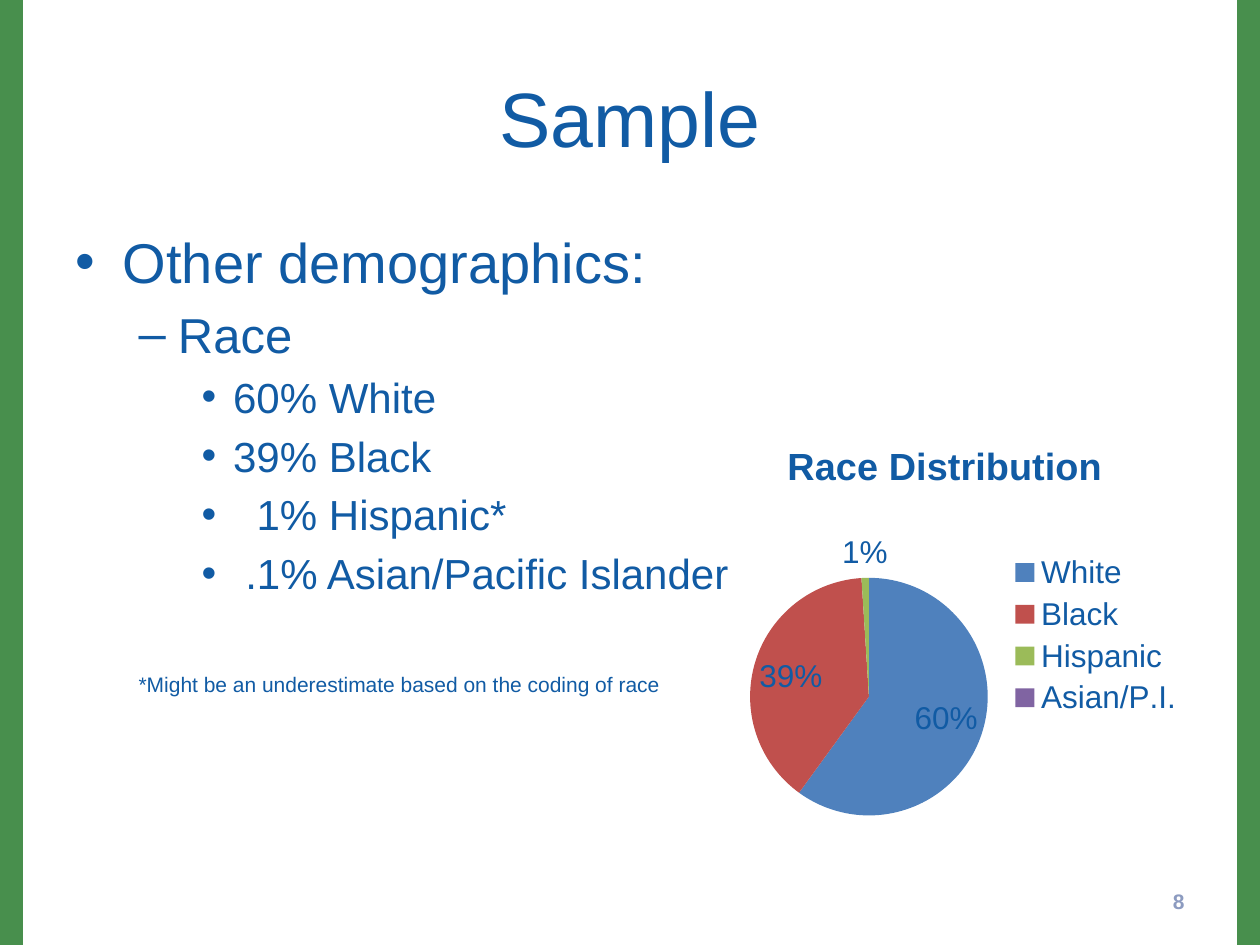
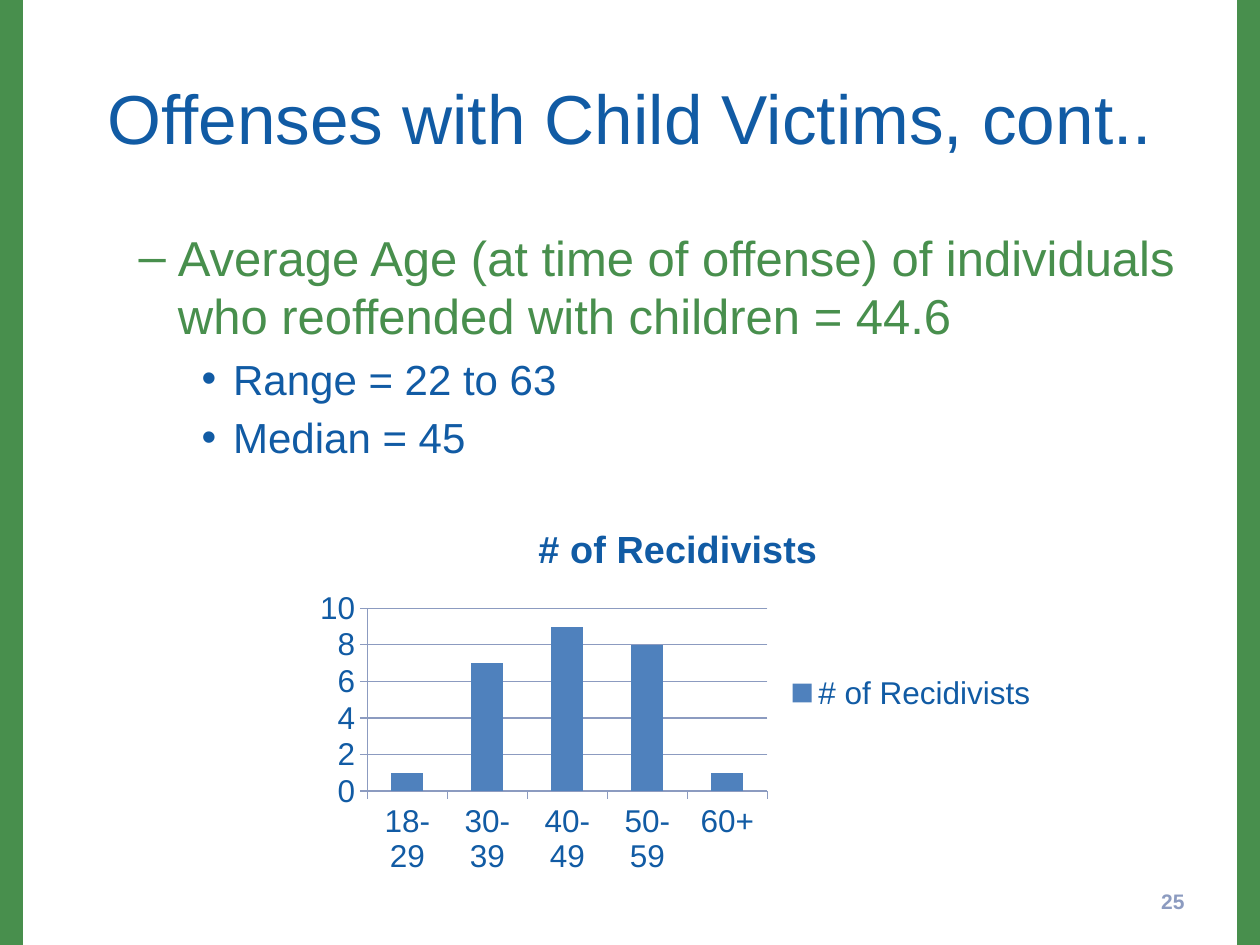
from dataclasses import dataclass

from lxml.etree import SubElement
from pptx import Presentation
from pptx.chart.data import CategoryChartData
from pptx.dml.color import RGBColor
from pptx.enum.chart import (XL_CHART_TYPE, XL_LABEL_POSITION,
                             XL_LEGEND_POSITION, XL_TICK_MARK)
from pptx.enum.shapes import MSO_SHAPE
from pptx.enum.text import MSO_ANCHOR, MSO_AUTO_SIZE, PP_ALIGN
from pptx.oxml.ns import qn
from pptx.util import Cm, Pt


@dataclass(frozen=True)
class Theme:
    font: str = "Arial"
    blue: str = "115BA4"
    green: str = "488F4D"
    muted: str = "8C9BC0"
    series: tuple = ("4F81BD", "C0504D", "9BBB59", "8064A2")
    title_size: float = 44
    long_title_size: float = 39.6
    level_sizes: tuple = (32, 28, 24)
    note_size: float = 12
    chart_size: float = 18
    chart_title_size: float = 21.6


THEME = Theme()
WIDTH, HEIGHT = Cm(25.4), Cm(19.05)
MARGIN = Cm(1.27)
CONTENT_WIDTH = WIDTH - 2 * MARGIN
BAND_WIDTH = Cm(0.43)
LEVEL_2_MARGIN, LEVEL_2_HANG = Cm(3.18), Cm(0.64)


def format_font(font, size, color=THEME.blue, bold=False):
    font.name = THEME.font
    font.size = Pt(size)
    font.bold = bold
    font.color.rgb = RGBColor.from_string(color)


def write_text(paragraph, text, size, color=THEME.blue, bold=False,
               align=None, level=0, space_before=None):
    paragraph.level = level
    paragraph.alignment = align
    if space_before is not None:
        paragraph.space_before = Pt(space_before)
    run = paragraph.add_run()
    run.text = text
    format_font(run.font, size, color, bold)
    return paragraph


def place(shape, left, top, width, height):
    shape.left, shape.top, shape.width, shape.height = left, top, width, height


def add_bands_to_master(presentation, slide):
    """Draw both side bands on a slide, then move them behind the master's text."""
    first_master_shape = presentation.slide_master.shapes[0]
    for number, left in enumerate((WIDTH - BAND_WIDTH, 0)):
        band = slide.shapes.add_shape(MSO_SHAPE.RECTANGLE, left, 0, BAND_WIDTH, HEIGHT)
        band.name = f"Side band {number + 1}"
        band.shadow.inherit = False
        band.fill.solid()
        band.fill.fore_color.rgb = RGBColor.from_string(THEME.green)
        band.line.color.rgb = RGBColor.from_string(THEME.green)
        band.line.width = Pt(2)
        band.element.nvSpPr.cNvPr.set("id", str(101 + number))
        first_master_shape.element.addprevious(band.element)


def add_content_slide(presentation, title, page_number, title_size=THEME.title_size):
    """Add a titled slide and return it with the text frame of its body."""
    slide = presentation.slides.add_slide(presentation.slide_layouts[1])
    title_shape, body = slide.shapes.title, slide.placeholders[1]
    place(title_shape, MARGIN, Cm(0.76), CONTENT_WIDTH, Cm(3.18))
    place(body, MARGIN, Cm(4.45), CONTENT_WIDTH, Cm(12.57))
    for shape in (title_shape, body):
        shape.text_frame.auto_size = MSO_AUTO_SIZE.NONE
    title_shape.text_frame.vertical_anchor = MSO_ANCHOR.MIDDLE
    write_text(title_shape.text_frame.paragraphs[0], title, title_size,
               align=PP_ALIGN.CENTER)

    number_box = slide.shapes.add_textbox(Cm(18.21), Cm(17.65), Cm(5.92), Cm(1.02))
    number_box.text_frame.word_wrap = True
    number_box.text_frame.vertical_anchor = MSO_ANCHOR.MIDDLE
    write_text(number_box.text_frame.paragraphs[0], str(page_number), THEME.note_size,
               color=THEME.muted, bold=True, align=PP_ALIGN.RIGHT)
    return slide, body.text_frame


def add_list_item(text_frame, text, level, size=None, **text_format):
    paragraph = text_frame.paragraphs[0]
    if paragraph.runs:
        paragraph = text_frame.add_paragraph()
    return write_text(paragraph, text, size or THEME.level_sizes[level],
                      level=level, **text_format)


def shift_text_from_bullet(paragraph, shift):
    """Move a third-level item's text right while its bullet stays in line."""
    properties = paragraph._p.get_or_add_pPr()
    properties.set("marL", str(LEVEL_2_MARGIN + shift))
    properties.set("indent", str(-LEVEL_2_HANG - shift))


def remove_bullet(paragraph):
    SubElement(paragraph._p.get_or_add_pPr(), qn("a:buNone"))


def fill_series(format_owner, color):
    format_owner.format.fill.solid()
    format_owner.format.fill.fore_color.rgb = RGBColor.from_string(color)


def add_titled_chart(slide, chart_type, title, series_name, values, box):
    """Add a one-series chart with a legend; values maps category to number."""
    data = CategoryChartData()
    data.categories = list(values)
    data.add_series(series_name, list(values.values()))
    chart = slide.shapes.add_chart(chart_type, *box, data).chart
    format_font(chart.font, THEME.chart_size)
    chart.has_title = True
    write_text(chart.chart_title.text_frame.paragraphs[0], title,
               THEME.chart_title_size, bold=True)
    chart.chart_title.include_in_layout = False
    chart.has_legend = True
    chart.legend.position = XL_LEGEND_POSITION.RIGHT
    chart.legend.include_in_layout = False
    return chart


def format_pie(chart):
    plot = chart.plots[0]
    plot.vary_by_categories = True
    for index, color in enumerate(THEME.series):
        fill_series(plot.series[0].points[index], color)
    plot.has_data_labels = True
    labels = plot.data_labels
    labels.show_percentage = True
    labels.show_value = False
    labels.number_format = "0%"
    labels.number_format_is_linked = False
    labels.position = XL_LABEL_POSITION.BEST_FIT
    format_font(labels.font, THEME.chart_size)


def format_columns(chart):
    plot = chart.plots[0]
    plot.vary_by_categories = False
    plot.gap_width = 150
    fill_series(plot.series[0], THEME.series[0])
    value_axis = chart.value_axis
    value_axis.has_major_gridlines = True
    value_axis.minimum_scale, value_axis.maximum_scale = 0, 10
    value_axis.major_unit = 2
    for axis in (chart.category_axis, value_axis):
        axis.major_tick_mark = XL_TICK_MARK.OUTSIDE
        format_font(axis.tick_labels.font, THEME.chart_size)
    for line_owner in (chart.category_axis, value_axis, value_axis.major_gridlines):
        line_owner.format.line.color.rgb = RGBColor.from_string(THEME.muted)
        line_owner.format.line.width = Pt(0.75)


def build_sample_slide(presentation):
    slide, body = add_content_slide(presentation, "Sample", 8)
    add_list_item(body, "Other demographics:", 0)
    add_list_item(body, "Race", 1)
    races = (("60% White", 0), ("39% Black", 0),
             ("1% Hispanic*", Cm(0.47)), (".1% Asian/Pacific Islander", Cm(0.24)))
    for text, shift in races:
        item = add_list_item(body, text, 2)
        if shift:
            shift_text_from_bullet(item, shift)
    remove_bullet(add_list_item(
        body, "*Might be an underestimate based on the coding of race", 1,
        size=THEME.note_size, space_before=42))
    chart = add_titled_chart(
        slide, XL_CHART_TYPE.PIE, "Race Distribution", "Series 1",
        {"White": 60, "Black": 39, "Hispanic": 1, "Asian/P.I.": 0},
        (Cm(13.97), Cm(8.46), Cm(10.16), Cm(8.69)))
    format_pie(chart)
    return slide


def build_offenses_slide(presentation):
    slide, body = add_content_slide(presentation, "Offenses with Child Victims, cont..",
                                    25, title_size=THEME.long_title_size)
    add_list_item(body, "Average Age (at time of offense) of individuals who "
                  "reoffended with children = 44.6", 1, color=THEME.green)
    for text in ("Range = 22 to 63", "Median = 45"):
        add_list_item(body, text, 2)
    chart = add_titled_chart(
        slide, XL_CHART_TYPE.COLUMN_CLUSTERED, "# of Recidivists", "# of Recidivists",
        {"18-29": 1, "30-39": 7, "40-49": 9, "50-59": 8, "60+": 1},
        (Cm(6.15), Cm(10.16), Cm(15.04), Cm(7.62)))
    format_columns(chart)


def main():
    presentation = Presentation()
    presentation.slide_width, presentation.slide_height = WIDTH, HEIGHT
    sample_slide = build_sample_slide(presentation)
    add_bands_to_master(presentation, sample_slide)
    build_offenses_slide(presentation)
    presentation.save("out.pptx")


if __name__ == "__main__":
    main()
